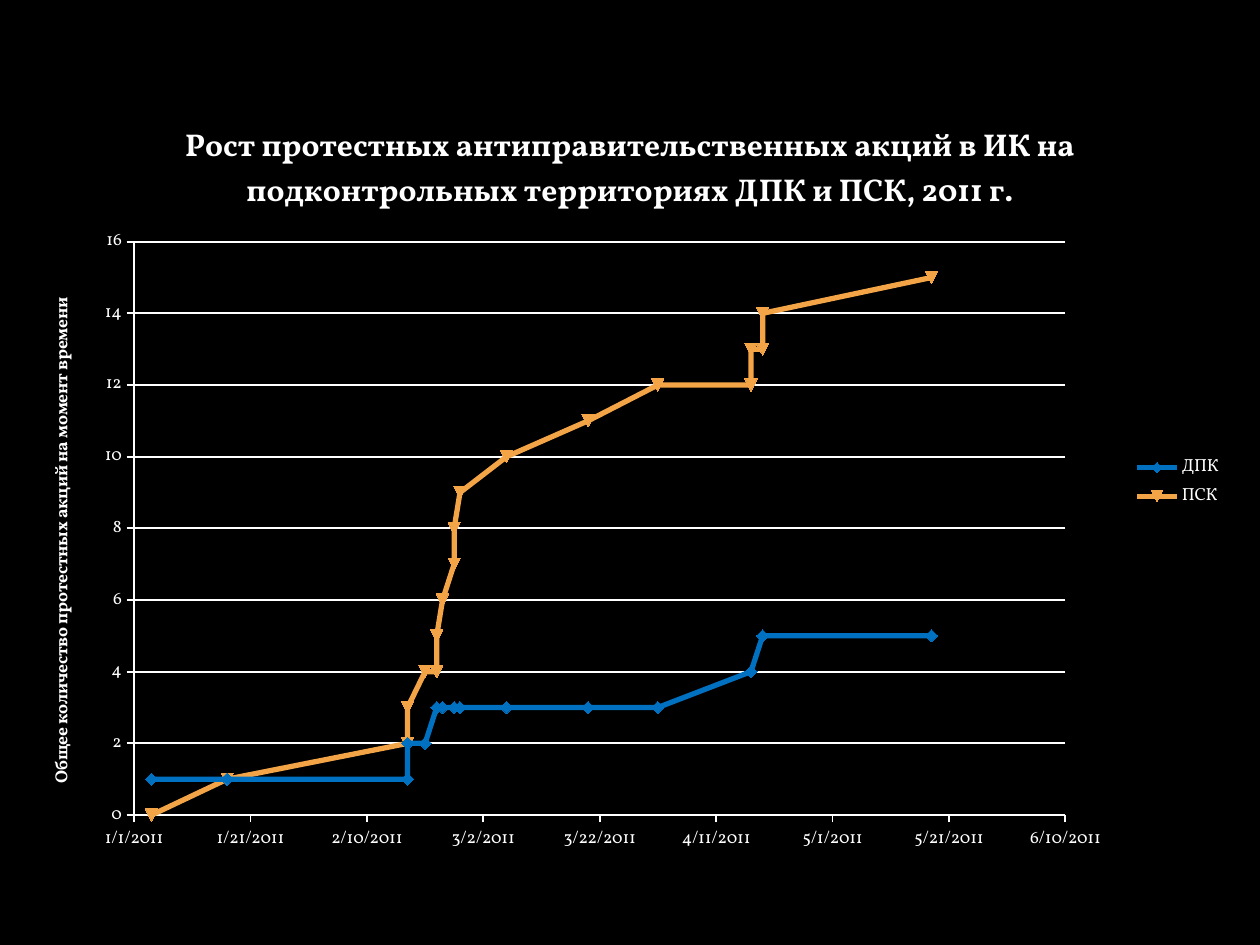
from dataclasses import dataclass

from lxml import etree
from pptx import Presentation
from pptx import util as u
from pptx.chart import data
from pptx.dml import color
from pptx.enum import chart as kinds
from pptx.oxml import ns


@dataclass(frozen=True)
class Theme:
    font: str = "Vollkorn"
    back: str = "000000"
    ink: str = "FFFFFF"
    blue: str = "0070C0"
    gold: str = "F3A447"
    title: float = 18
    body: float = 10
    grid: float = 1
    curve: float = 3


THEME = Theme()
WIDE, HIGH = u.Inches(10), u.Inches(7.5)
START = 40544  # 1 January 2011 as a serial date
SPAN, STEP = 160, 20
DAYS = [3, 16, 47, 47, 47, 50, 52, 52, 53, 55,
        55, 56, 64, 78, 90, 106, 106, 108, 108, 137]
COUNTS = {
    "ДПК": [1] * 3 + [2] * 3 + [3] * 9 + [4] * 2 + [5] * 3,
    "ПСК": [0, 1, 2, 2, 3, 4, 4, 5, 6, 7, 8, 9, 10, 11, 12, 12, 13, 13, 14, 15],
}
TITLE = ("Рост протестных антиправительственных акций в ИК на "
         "подконтрольных территориях ДПК и ПСК, 2011 г.")
Y_TITLE = "Общее количество протестных акций на момент времени"


def rgb(code):
    return color.RGBColor.from_string(code)


def set_font(font, size, bold=False):
    font.name, font.size, font.bold = THEME.font, u.Pt(size), bold
    font.color.rgb = rgb(THEME.ink)


def set_line(line, code, width):
    line.color.rgb, line.width = rgb(code), u.Pt(width)


def add_title(owner, words, size):
    run = owner.text_frame.paragraphs[0].add_run()
    run.text = words
    set_font(run.font, size, True)


def set_axis(axis, low, high, step, form):
    axis.minimum_scale, axis.maximum_scale = low, high
    axis.major_unit = step
    axis.major_tick_mark = kinds.XL_TICK_MARK.OUTSIDE
    axis.tick_labels.number_format = form
    axis.tick_labels.number_format_is_linked = False
    set_font(axis.tick_labels.font, THEME.body)
    set_line(axis.format.line, THEME.ink, THEME.grid)


def place_plot(chart, x, y, w, h):
    """Fix the inner plot area, in shares of the chart's size."""
    area = chart.plots[0]._element.getparent()
    for old in area.findall(ns.qn("c:layout")):
        area.remove(old)
    layout = etree.Element(ns.qn("c:layout"))
    box = etree.SubElement(layout, ns.qn("c:manualLayout"))
    rules = {"layoutTarget": "inner", "xMode": "edge", "yMode": "edge",
             "x": x, "y": y, "w": w, "h": h}
    for tag, val in rules.items():
        etree.SubElement(box, ns.qn(f"c:{tag}")).set("val", str(val))
    area.insert(0, layout)


def style_curve(curve, code, mark):
    curve.smooth = True
    set_line(curve.format.line, code, THEME.curve)
    curve.marker.style, curve.marker.size = mark, 7
    curve.marker.format.fill.solid()
    curve.marker.format.fill.fore_color.rgb = rgb(code)
    set_line(curve.marker.format.line, code, 0.75)


def add_graph(slide):
    table = data.XyChartData()
    for name, counts in COUNTS.items():
        row = table.add_series(name)
        for day, count in zip(DAYS, counts):
            row.add_data_point(START + day, count)
    chart = slide.shapes.add_chart(
        kinds.XL_CHART_TYPE.XY_SCATTER_SMOOTH, int(WIDE * 0.02), int(HIGH * 0.1),
        int(WIDE * 0.96), int(HIGH * 0.82), table).chart
    set_font(chart.font, THEME.body)
    add_title(chart.chart_title, TITLE, THEME.title)
    chart.chart_title.include_in_layout = False

    set_axis(chart.category_axis, START, START + SPAN, STEP, "m/d/yyyy")
    chart.category_axis.has_major_gridlines = False
    ups = chart.value_axis
    set_axis(ups, 0, 16, 2, "General")
    set_line(ups.major_gridlines.format.line, THEME.ink, THEME.grid)
    add_title(ups.axis_title, Y_TITLE, THEME.body)

    chart.has_legend = True
    chart.legend.position = kinds.XL_LEGEND_POSITION.RIGHT
    chart.legend.include_in_layout = False
    set_font(chart.legend.font, THEME.body)

    plot = chart.plots[0]
    plot.vary_by_categories = False
    marks = kinds.XL_MARKER_STYLE
    looks = [(THEME.blue, marks.DIAMOND), (THEME.gold, marks.AUTOMATIC)]
    for curve, (code, mark) in zip(plot.series, looks):
        style_curve(curve, code, mark)
    place_plot(chart, 0.09, 0.19, 0.77, 0.74)


def main():
    deck = Presentation()
    deck.slide_width, deck.slide_height = WIDE, HIGH
    slide = deck.slides.add_slide(deck.slide_layouts[6])
    slide.background.fill.solid()
    slide.background.fill.fore_color.rgb = rgb(THEME.back)
    add_graph(slide)
    deck.save("out.pptx")


if __name__ == "__main__":
    main()
